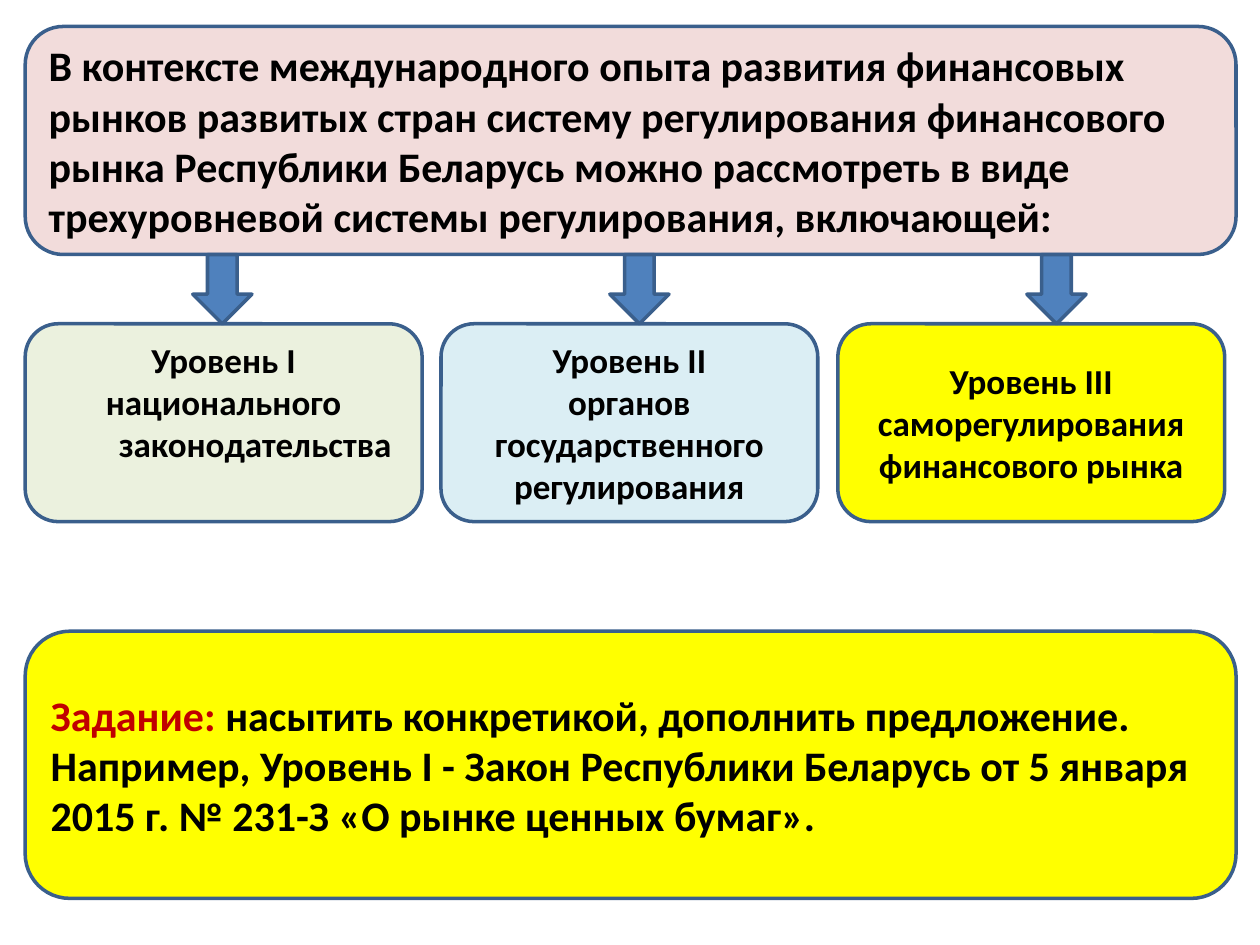
from pptx import Presentation
from pptx.dml.color import RGBColor
from pptx.enum.shapes import MSO_SHAPE
from pptx.enum.text import MSO_ANCHOR, PP_ALIGN
from pptx.util import Inches, Pt

ROUNDED = MSO_SHAPE.ROUNDED_RECTANGLE
DOWN_ARROW = MSO_SHAPE.DOWN_ARROW
MIDDLE = MSO_ANCHOR.MIDDLE
LEFT, CENTER = PP_ALIGN.LEFT, PP_ALIGN.CENTER

FONT = "Calibri"
BLACK = RGBColor(0x00, 0x00, 0x00)
RED = RGBColor(0xC0, 0x00, 0x00)
OUTLINE = RGBColor(0x3A, 0x5F, 0x8C)
BLUE = RGBColor(0x4F, 0x81, 0xBD)
PINK = RGBColor(0xF2, 0xDC, 0xDB)
GREEN = RGBColor(0xEB, 0xF1, 0xDE)
AQUA = RGBColor(0xDB, 0xEE, 0xF4)
YELLOW = RGBColor(0xFF, 0xFF, 0x00)

MARGIN = 0.2
FULL_WIDTH = 9.61
INTRO_TOP, INTRO_HEIGHT = 0.21, 1.81
LEVEL_TOP, LEVEL_HEIGHT = 2.57, 1.57
TASK_TOP, TASK_HEIGHT = 5.01, 2.12
ARROW_TOP = INTRO_TOP + INTRO_HEIGHT
ARROW_LEFT, ARROW_STEP, ARROW_WIDTH = 1.53, 3.31, 0.47
HANGING_INDENT = 0.5

INTRO = [[(
    "В контексте международного опыта развития финансовых рынков развитых "
    "стран систему регулирования финансового рынка Республики Беларусь можно "
    "рассмотреть в виде трехуровневой системы регулирования, включающей:",
    BLACK)]]
TASK = [[
    ("Задание: ", RED),
    ("насытить конкретикой, дополнить предложение. Например, Уровень I - "
     "Закон Республики Беларусь от 5 января 2015 г. № 231-З "
     "«О рынке ценных бумаг».", BLACK),
]]
# left, width, fill, paragraphs
LEVELS = [
    (0.2, 3.15, GREEN, ["Уровень I", "национального законодательства"]),
    (3.5, 2.99, AQUA, ["Уровень II", "органов государственного регулирования"]),
    (6.65, 3.07, YELLOW, ["Уровень III саморегулирования финансового рынка"]),
]


def add_outlined(slide, kind, left, top, width, height, fill):
    shape = slide.shapes.add_shape(
        kind, Inches(left), Inches(top), Inches(width), Inches(height))
    shape.shadow.inherit = False
    shape.fill.solid()
    shape.fill.fore_color.rgb = fill
    shape.line.color.rgb = OUTLINE
    shape.line.width = Pt(2)
    return shape


def write(shape, paragraphs, size, alignment):
    """Fill the shape with paragraphs, each a list of (text, colour) runs."""
    frame = shape.text_frame
    frame.word_wrap = True
    frame.vertical_anchor = MIDDLE
    for number, runs in enumerate(paragraphs):
        paragraph = frame.add_paragraph() if number else frame.paragraphs[0]
        paragraph.alignment = alignment
        for text, colour in runs:
            run = paragraph.add_run()
            run.text = text
            run.font.name = FONT
            run.font.size = Pt(size)
            run.font.bold = True
            run.font.color.rgb = colour


def add_panel(slide, top, height, fill, paragraphs):
    panel = add_outlined(slide, ROUNDED, MARGIN, top, FULL_WIDTH, height, fill)
    write(panel, paragraphs, 24, LEFT)


def add_level(slide, left, width, fill, lines):
    level = add_outlined(
        slide, ROUNDED, left, LEVEL_TOP, width, LEVEL_HEIGHT, fill)
    write(level, [[(line, BLACK)] for line in lines], 20, CENTER)
    return level


def hang_and_raise(level):
    """Give the text a hanging indent and lift it by one line."""
    level.text_frame.margin_bottom = Inches(0.38)
    for paragraph in level.text_frame.paragraphs:
        properties = paragraph._p.get_or_add_pPr()
        properties.set("marL", str(Inches(HANGING_INDENT)))
        properties.set("indent", str(-Inches(HANGING_INDENT)))


def add_arrows(slide):
    for column in range(len(LEVELS)):
        add_outlined(slide, DOWN_ARROW, ARROW_LEFT + column * ARROW_STEP,
                     ARROW_TOP, ARROW_WIDTH, LEVEL_TOP - ARROW_TOP, BLUE)


def main():
    deck = Presentation()
    deck.slide_width, deck.slide_height = Inches(10), Inches(7.5)
    slide = deck.slides.add_slide(deck.slide_layouts[6])

    add_panel(slide, INTRO_TOP, INTRO_HEIGHT, PINK, INTRO)
    add_panel(slide, TASK_TOP, TASK_HEIGHT, YELLOW, TASK)
    levels = [add_level(slide, *level) for level in LEVELS]
    hang_and_raise(levels[0])
    add_arrows(slide)

    deck.save("out.pptx")


if __name__ == "__main__":
    main()
